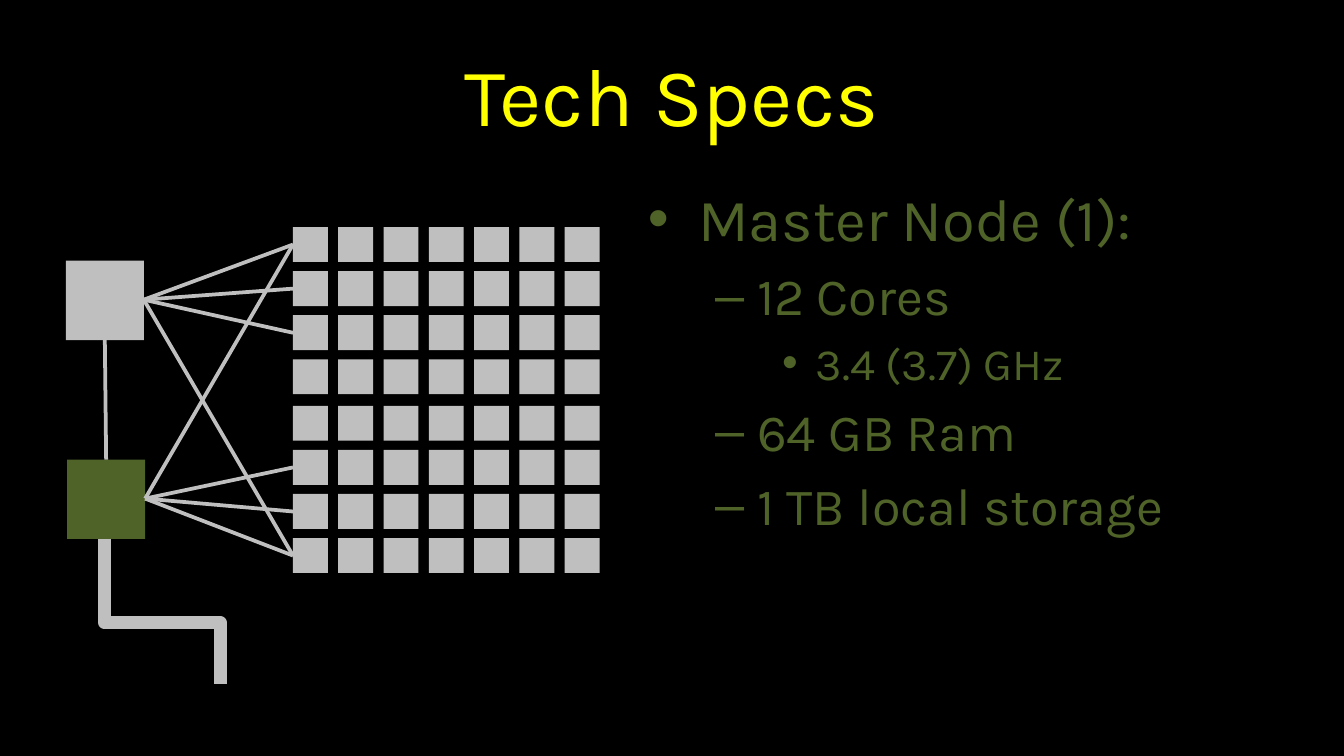
from pptx import Presentation
from pptx.dml.color import RGBColor
from pptx.enum.shapes import MSO_CONNECTOR, MSO_SHAPE
from pptx.enum.text import MSO_ANCHOR, MSO_AUTO_SIZE, PP_ALIGN
from pptx.oxml.ns import qn
from pptx.util import Inches, Pt
from lxml.etree import SubElement

COLORS = {"back": "000000", "title": "FFFF00", "node": "BFBFBF", "master": "4F6228"}

prs = Presentation()
prs.slide_width = Inches(10)
prs.slide_height = prs.slide_width * 9 // 16
U = prs.slide_width // 100
s = prs.slides.add_slide(prs.slide_layouts[1])
s.background.fill.solid()
s.background.fill.fore_color.rgb = RGBColor.from_string(COLORS["back"])


def draw(*, box=None, line=None, color="node", width=2, kind=MSO_CONNECTOR.STRAIGHT):
    rgb = RGBColor.from_string(COLORS[color])
    if box:
        sp = s.shapes.add_shape(MSO_SHAPE.RECTANGLE, *[round(v * U) for v in box])
        sp.shadow.inherit = False
        sp.fill.solid()
        sp.fill.fore_color.rgb = rgb
        sp.line.fill.background()
    else:
        sp = s.shapes.add_connector(kind, *[round(v * U) for v in line])
        sp.line.color.rgb = rgb
        sp.line.width = Pt(width)
        SubElement(sp._element.spPr, qn("a:effectLst"))
    return sp


def write(p, text, size, color, level=0, align=None):
    p.level = level
    p.alignment = align
    r = p.add_run()
    r.text = text
    r.font.name = "Karla"
    r.font.size = Pt(size)
    r.font.color.rgb = RGBColor.from_string(COLORS[color])


title, body = s.placeholders
for sp, box in ((title, (5, 2.3, 90, 9.4)), (body, (47.2, 13, 47.1, 37.1))):
    sp.left, sp.top, sp.width, sp.height = [round(v * U) for v in box]
    sp.text_frame.word_wrap = True
    sp.text_frame.auto_size = MSO_AUTO_SIZE.NONE

title.text_frame.vertical_anchor = MSO_ANCHOR.MIDDLE
write(title.text_frame.paragraphs[0], "Tech Specs", 44, "title", align=PP_ALIGN.CENTER)

specs = [
    ("Master Node (1):", 0),
    ("12 Cores", 1),
    ("3.4 (3.7) GHz", 2),
    ("64 GB Ram", 1),
    ("1 TB local storage", 1),
]
tf = body.text_frame
for i, (text, level) in enumerate(specs):
    p = tf.add_paragraph() if i else tf.paragraphs[0]
    write(p, text, 32 - 4 * level, "master", level=level)

CELL, NODE = 2.6, 5.8
GRID_X = 21.8
rows = [16.9 + 13.3 * half + 3.28 * row for half in range(2) for row in range(4)]
for y in rows:
    for col in range(7):
        draw(box=(GRID_X + 3.37 * col, y, CELL, CELL))

heads = [(4.9, 19.4, "node", (0, 1, 2, 7)), (5, 34.2, "master", (0, 5, 6, 7))]
for x, y, color, targets in heads:
    draw(box=(x, y, NODE, NODE + 0.1), color=color)
    for row in targets:
        draw(line=(x + NODE, y + NODE / 2, GRID_X, rows[row] + CELL / 2))

draw(line=(7.8, 25.3, 7.9, 34.2))

uplink = draw(line=(17.5, 41.2, 6.7, 49.8), width=7, kind=MSO_CONNECTOR.ELBOW)
uplink._element.spPr.find(qn("a:xfrm")).set("rot", str(270 * 60000))
adjusts = uplink._element.spPr.find(qn("a:prstGeom")).find(qn("a:avLst"))
SubElement(adjusts, qn("a:gd"), name="adj1", fmla="val 57900")

prs.save("out.pptx")
